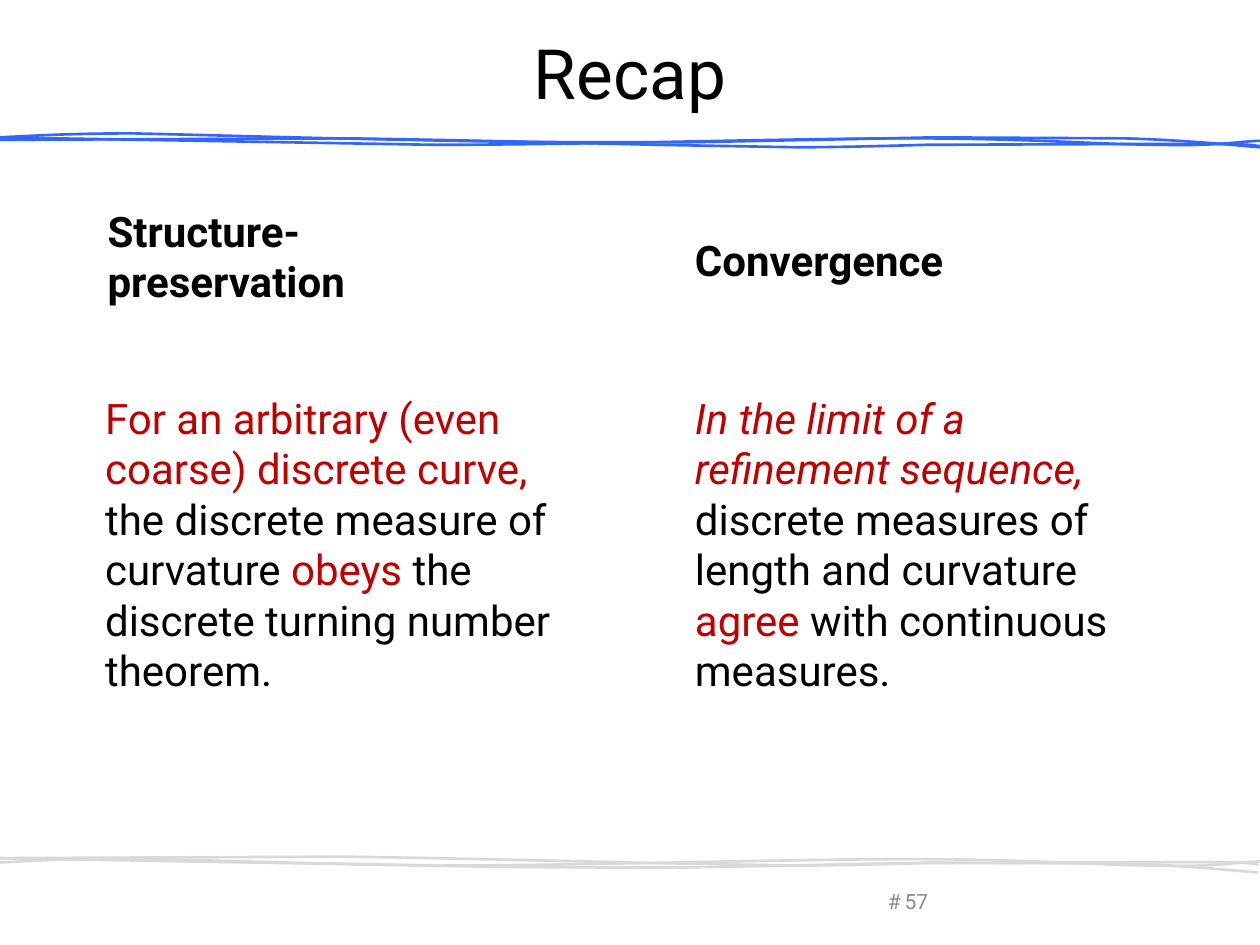
"""Build the recap slide comparing structure-preservation and convergence."""
from lxml.etree import SubElement
from pptx import Presentation
from pptx.dml.color import RGBColor
from pptx.enum.shapes import MSO_SHAPE
from pptx.enum.text import MSO_ANCHOR, PP_ALIGN
from pptx.oxml.ns import qn
from pptx.util import Cm, Pt

FONT = "Roboto"
BLACK = RGBColor(0x00, 0x00, 0x00)
RED = RGBColor(0xC0, 0x00, 0x00)
GRAY = RGBColor(0x8C, 0x8C, 0x8C)
BLUE_RULE = RGBColor(0x33, 0x66, 0xFF)
GRAY_RULE = RGBColor(0xD9, 0xD9, 0xD9)

TITLE = "Recap"
COLUMNS = [
    {
        "heading": "Convergence",
        "heading_box": (13.76, 1.19, 8.26, 7.19),
        "body_left": 13.76,
        "body": [
            ("In the limit of a refinement sequence, ", RED, True),
            ("discrete measures of length and curvature ", BLACK, False),
            ("agree", RED, False),
            (" with continuous measures.", BLACK, False),
        ],
    },
    {
        "heading": "Structure-\npreservation",
        "heading_box": (1.92, 0.98, 8.26, 7.42),
        "body_left": 1.87,
        "body": [
            ("For an arbitrary (even coarse) discrete curve, ", RED, False),
            ("the discrete measure of curvature ", BLACK, False),
            ("obeys", RED, False),
            (" the discrete turning number theorem.", BLACK, False),
        ],
    },
]
BODY_TOP, BODY_WIDTH, BODY_HEIGHT = 7.76, 9.98, 6.4
PAGE_LABELS = [("#", (17.65, 17.78, 0.76, 0.76)), ("57", (17.65, 17.65, 1.65, 1.02))]

STRANDS = [
    [
        [(-0.03, 2.77)],
        [(8.74, 2.92)],
        [(11.81, 2.92), (15.93, 2.79), (18.36, 2.79)],
        [(20.8, 2.79), (22.25, 2.92), (23.42, 2.92)],
        [(24.59, 2.95), (25.07, 2.84), (25.4, 2.84)],
        [(25.73, 2.82), (25.55, 2.84), (25.37, 2.84)],
    ],
    [
        [(-0.03, 2.77)],
        [(0.66, 2.74), (1.32, 2.69), (2.69, 2.69)],
        [(4.09, 2.72), (6.4, 2.79), (8.26, 2.82)],
        [(10.08, 2.87), (12.04, 2.87), (13.79, 2.87)],
        [(15.54, 2.84), (18.8, 2.77), (18.8, 2.77)],
        [(22.66, 2.79)],
        [(23.75, 2.82), (24.59, 2.9), (25.4, 2.97)],
    ],
    [
        [(-0.05, 2.82)],
        [(6.99, 2.79)],
        [(9.19, 2.82), (13.21, 2.92), (13.21, 2.92)],
        [(16.1, 2.97)],
        [(17.02, 2.97), (18.67, 2.92), (18.67, 2.92)],
        [(23.95, 2.9)],
        [(25.07, 2.9), (25.25, 2.92), (25.4, 2.95)],
    ],
]
RULES = [
    (BLUE_RULE, 0, (0, 0, 0)),
    (GRAY_RULE, -0.04, (14.53, 14.62, 14.48)),
]


def draw_strand(group, strand, color, shift, drop):
    """Draw one open strand of lines and cubic curves."""
    points = [(Cm(x + shift), Cm(y + drop)) for segment in strand for x, y in segment]
    builder = group.shapes.build_freeform(*points[0])
    builder.add_line_segments(points[1:], close=False)
    shape = builder.convert_to_shape()
    steps = iter(list(shape._element.iter(qn("a:lnTo"))))
    for segment in strand[1:]:
        first, *others = [next(steps) for _ in segment]
        if others:
            first.tag = qn("a:cubicBezTo")
        for step in others:
            first.append(step[0])
            step.getparent().remove(step)
    shape.shadow.inherit = False
    shape.fill.background()
    shape.line.color.rgb = color
    shape.line.width = Pt(1.5)


def write(shape, runs, size=24, bold=False, align=PP_ALIGN.LEFT, wrap=True):
    """Write (text, color, italic) runs into one middle-anchored paragraph."""
    frame = shape.text_frame
    frame.word_wrap = wrap
    frame.vertical_anchor = MSO_ANCHOR.MIDDLE
    paragraph = frame.paragraphs[0]
    paragraph.alignment = align
    for text, color, italic in runs:
        for index, line in enumerate(text.split("\n")):
            if index:
                paragraph.add_line_break()
            run = paragraph.add_run()
            run.text = line
            font = run.font
            font.name, font.size = FONT, Pt(size)
            font.bold, font.italic = bold, italic
            font.color.rgb = color


def add_text(slide, box, runs, **text_format):
    """Add a text box and return it."""
    shape = slide.shapes.add_textbox(*map(Cm, box))
    write(shape, runs, **text_format)
    return shape


def add_column(slide, column):
    """Add the heading and body of one column."""
    heading = slide.shapes.add_shape(MSO_SHAPE.CAN, *map(Cm, column["heading_box"]))
    heading.shadow.inherit = False
    heading.fill.background()
    heading.line.fill.background()
    write(heading, [(column["heading"], BLACK, False)], bold=True, wrap=False)
    body_box = (column["body_left"], BODY_TOP, BODY_WIDTH, BODY_HEIGHT)
    body = add_text(slide, body_box, column["body"])
    SubElement(body.text_frame._txBody.bodyPr, qn("a:spAutoFit"))


def main():
    presentation = Presentation()
    presentation.slide_width, presentation.slide_height = Cm(25.4), Cm(19.05)
    slide = presentation.slides.add_slide(presentation.slide_layouts[5])

    for color, shift, drops in RULES:
        group = slide.shapes.add_group_shape()
        for strand, drop in zip(STRANDS, drops):
            draw_strand(group, strand, color, shift, drop)

    title = slide.shapes.title
    title.left, title.top, title.width, title.height = map(Cm, (1.27, 0.78, 22.86, 1.35))
    write(title, [(TITLE, BLACK, False)], size=39.6, align=PP_ALIGN.CENTER)

    for column in COLUMNS:
        add_column(slide, column)
    for label, box in PAGE_LABELS:
        add_text(slide, box, [(label, GRAY, False)], size=12, align=PP_ALIGN.CENTER)

    presentation.save("out.pptx")


if __name__ == "__main__":
    main()
